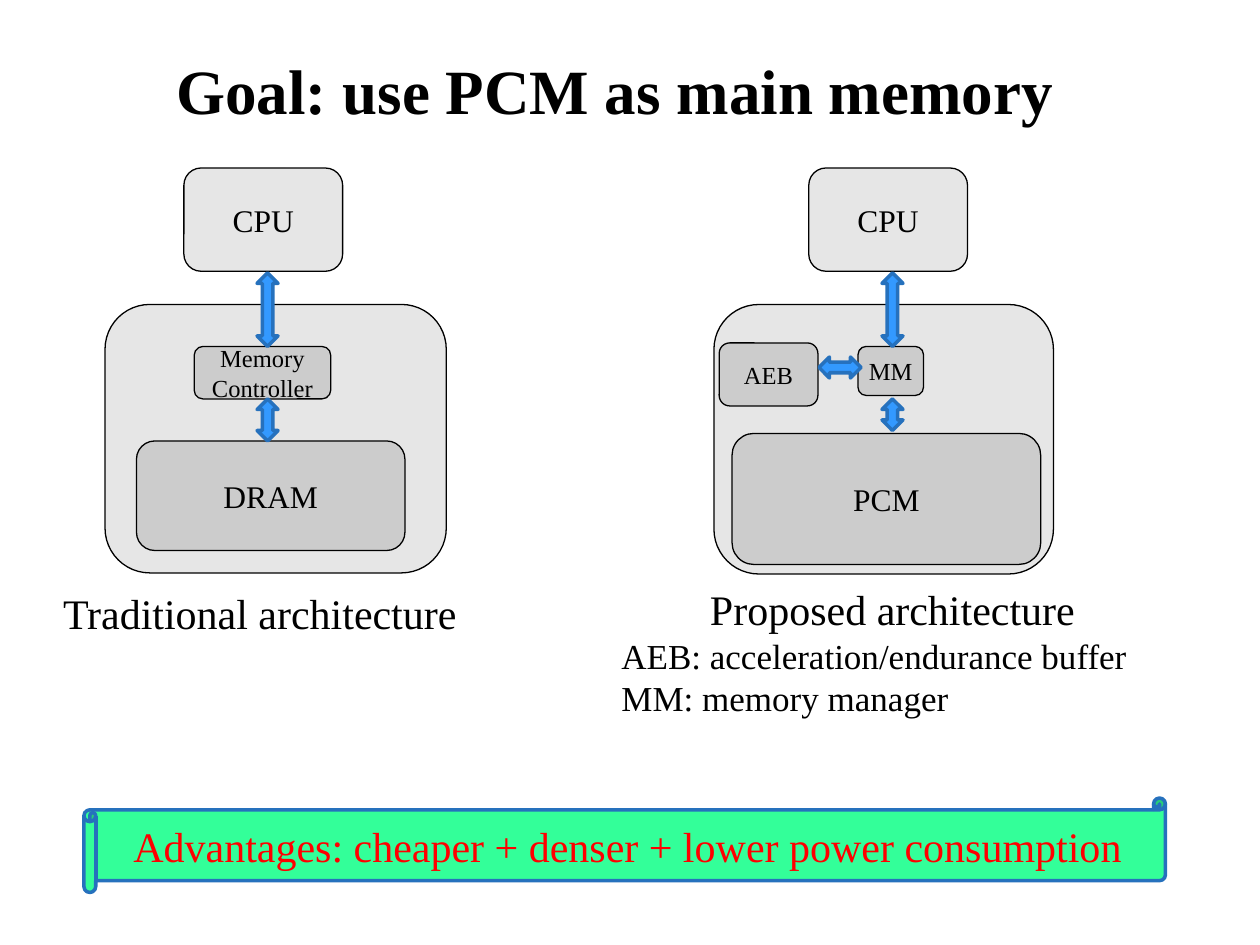
import pptx
import pptx.util
import pptx.dml.color
import pptx.enum.shapes
import pptx.enum.text
from dataclasses import dataclass

Pt = pptx.util.Pt
RGB = pptx.dml.color.RGBColor.from_string
SHAPE = pptx.enum.shapes.MSO_SHAPE
ANCHOR = pptx.enum.text.MSO_ANCHOR
ALIGN = pptx.enum.text.PP_ALIGN


@dataclass(frozen=True)
class Theme:
    font: str = "Times New Roman"
    text: str = "000000"
    outer: str = "E6E6E6"
    inner: str = "CCCCCC"
    arrow: str = "3399FF"
    edge: str = "2671BD"
    banner: str = "33FF99"
    accent: str = "FF0000"
    title: int = 36
    heading: int = 24
    body: int = 20
    label: int = 18
    small: int = 14
    thin: float = 0.75
    thick: float = 2


class Deck:
    def __init__(self, theme):
        self.theme = theme
        self.prs = pptx.Presentation()
        self.prs.slide_width, self.prs.slide_height = Pt(720), Pt(540)
        self.slide = self.prs.slides.add_slide(self.prs.slide_layouts[6])

    def fill_text(self, tf, lines, color=None, align=ALIGN.CENTER):
        for i, (text, size) in enumerate(lines):
            p = tf.paragraphs[0] if i == 0 else tf.add_paragraph()
            p.text = text
            p.alignment = align
            p.font.name = self.theme.font
            p.font.size = Pt(size)
            p.font.color.rgb = RGB(color or self.theme.text)

    def inset(self, tf, x=0, y=0):
        tf.margin_left = tf.margin_right = Pt(x)
        tf.margin_top = tf.margin_bottom = Pt(y)

    def shape(self, kind, box, fill, line, width):
        sp = self.slide.shapes.add_shape(kind, *map(Pt, box))
        sp.shadow.inherit = False
        sp.fill.solid()
        sp.fill.fore_color.rgb = RGB(fill)
        sp.line.color.rgb = RGB(line)
        sp.line.width = Pt(width)
        return sp

    def block(self, box, fill, text="", size=None):
        t = self.theme
        sp = self.shape(SHAPE.FLOWCHART_ALTERNATE_PROCESS, box, fill, t.text, t.thin)
        tf = sp.text_frame
        self.inset(tf)
        tf.word_wrap = False
        tf.vertical_anchor = ANCHOR.MIDDLE
        if text:
            self.fill_text(tf, [(line, size or t.label) for line in text.split("\n")])

    def arrow(self, box):
        t = self.theme
        kind = SHAPE.UP_DOWN_ARROW if box[3] > box[2] else SHAPE.LEFT_RIGHT_ARROW
        self.shape(kind, box, t.arrow, t.edge, t.thick)

    def text(self, box, lines, align=ALIGN.CENTER):
        tf = self.slide.shapes.add_textbox(*map(Pt, box)).text_frame
        tf.word_wrap = True
        self.fill_text(tf, lines, align=align)
        return tf

    def banner(self, box, text):
        t = self.theme
        sp = self.shape(SHAPE.HORIZONTAL_SCROLL, box, t.banner, t.edge, t.thick)
        sp.text_frame.vertical_anchor = ANCHOR.MIDDLE
        self.fill_text(sp.text_frame, [(text, t.heading)], t.accent)


def main():
    t = Theme()
    deck = Deck(t)

    tf = deck.text((72, 24, 558.7, 51.8), [("Goal: use PCM as main memory", t.title)])
    deck.inset(tf, 6.5, 2.9)
    tf.vertical_anchor = ANCHOR.BOTTOM
    tf.paragraphs[0].font.bold = True

    memories = (
        (0, (60, 174, 195, 153.4)),
        (357.1, (408, 174, 194, 154)),
    )
    for dx, memory in memories:
        deck.block((105.1 + dx, 96, 90.7, 59), t.outer, "CPU")
        deck.block(memory, t.outer)

    deck.block((111, 198, 78, 30), t.inner, "Memory\nController", t.small)
    deck.block((78, 252, 153.4, 62.6), t.inner, "DRAM")
    deck.block((411, 196, 56.4, 36), t.inner, "AEB", t.small)
    deck.block((490.3, 198, 37.4, 28), t.inner, "MM", t.small)
    deck.block((418.3, 247.7, 176.4, 74.9), t.inner, "PCM")

    for (dx, _), gap in zip(memories, (24, 18)):
        deck.arrow((146.9 + dx, 156, 12, 42))
        deck.arrow((146.9 + dx, 228, 12, gap))
    deck.arrow((468, 204, 24, 12))

    tf = deck.text((36, 336, 234, 30),
                   [("Traditional architecture", t.heading)], ALIGN.LEFT)
    deck.inset(tf)
    tf = deck.text((348, 330, 324, 85), [
        ("Proposed architecture", t.heading),
        ("AEB: acceleration/endurance buffer", t.body),
        ("MM: memory manager", t.body),
    ], ALIGN.LEFT)
    tf.paragraphs[0].alignment = ALIGN.CENTER

    deck.banner((48, 456, 618, 54),
                "Advantages: cheaper + denser + lower power consumption")
    deck.prs.save("out.pptx")


if __name__ == "__main__":
    main()
